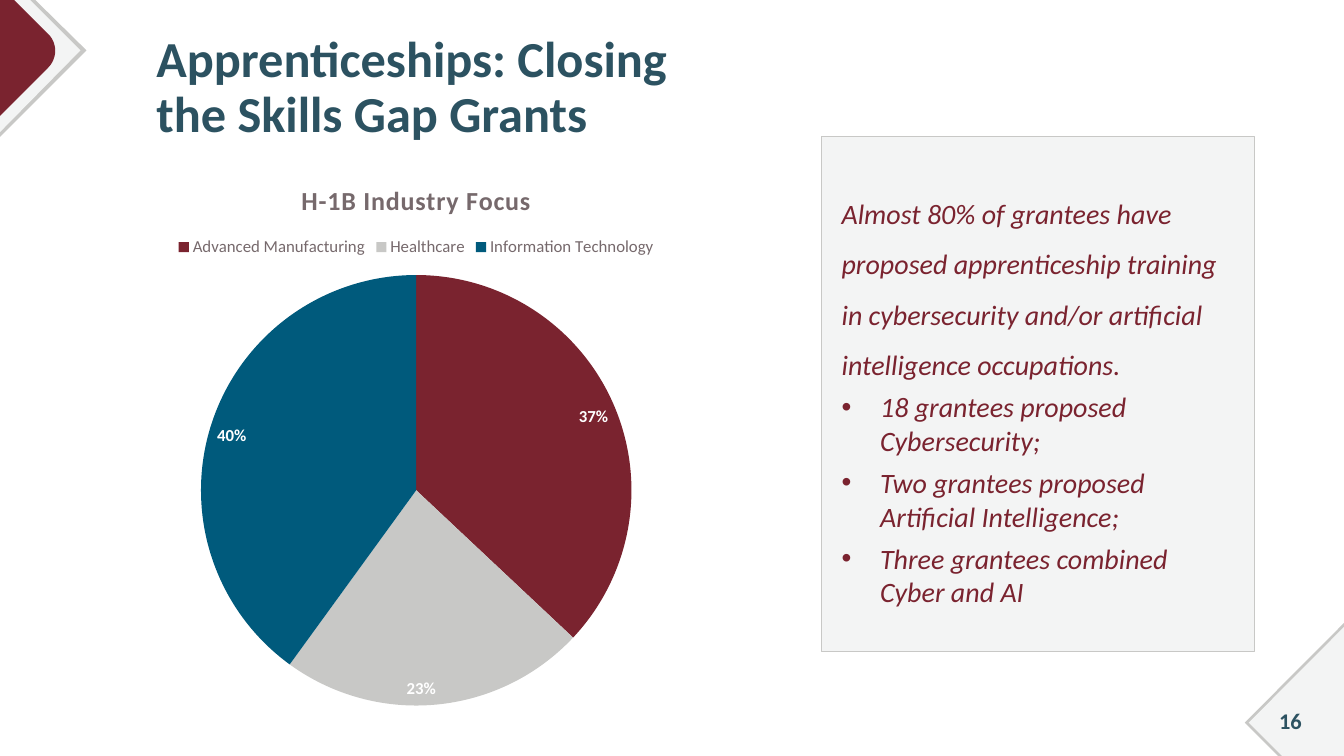
from dataclasses import dataclass

from lxml import etree
from pptx import Presentation
from pptx import util as u
from pptx.chart.data import CategoryChartData
from pptx.dml.color import RGBColor
from pptx.enum import chart as charts, shapes, text
from pptx.oxml.ns import qn


@dataclass(frozen=True)
class Theme:
    font: str = "Calibri"
    navy: str = "2C5261"
    maroon: str = "7A232F"
    blue: str = "005A7C"
    silver: str = "C8C8C6"
    mist: str = "F3F4F4"
    taupe: str = "76696C"
    ink: str = "242021"
    white: str = "FFFFFF"
    title_size: float = 36
    body_size: float = 20
    chart_title_size: float = 18.6
    number_size: float = 16
    label_size: float = 12
    chart_size: float = 10


THEME = Theme()
WIDTH, HEIGHT = 33.87, 19.05

# Corner outlines in centimetres, from back to front
CORNERS = [
    (THEME.silver, [(WIDTH, 15.7), (WIDTH, HEIGHT), (32.21, HEIGHT), (31.37, 18.21)]),
    (THEME.mist, [(WIDTH, 15.8), (WIDTH, HEIGHT), (32.31, HEIGHT), (31.47, 18.21)]),
    (THEME.silver, [(0, 0), (0.89, 0), (2.18, 1.27), (0, 3.45)]),
    (THEME.mist, [(0, 0), (0.76, 0), (2.03, 1.27), (0, 3.33)]),
]
TIP_CURVE = [(1.22, 0.86), (1.45, 1.09), (1.45, 1.47), (1.22, 1.7)]

STATEMENT = ("Almost 80% of grantees have proposed apprenticeship training in "
             "cybersecurity and/or artificial intelligence occupations.")
BULLETS = [
    "18 grantees proposed Cybersecurity;",
    "Two grantees proposed Artificial Intelligence;",
    "Three grantees combined Cyber and AI",
]
INDUSTRIES = [
    ("Advanced Manufacturing", 37, THEME.maroon),
    ("Healthcare", 23, THEME.silver),
    ("Information Technology", 40, THEME.blue),
]


def apply(target, **values):
    for name, value in values.items():
        setattr(target, name, value)


def style_font(font, size, color, **values):
    apply(font, name=THEME.font, size=u.Pt(size), **values)
    font.color.rgb = RGBColor.from_string(color)


def place(shape, left, top, width, height):
    apply(shape, left=u.Cm(left), top=u.Cm(top), width=u.Cm(width), height=u.Cm(height))


def set_frame(frame, anchor, left, top, right, bottom):
    apply(frame, word_wrap=True, auto_size=text.MSO_AUTO_SIZE.NONE, vertical_anchor=anchor,
          margin_left=u.Cm(left), margin_top=u.Cm(top),
          margin_right=u.Cm(right), margin_bottom=u.Cm(bottom))


def write(para, words, size, color, **values):
    span = para.add_run()
    span.text = words
    style_font(span.font, size, color, **values)


def fill_solid(shape, color):
    shape.shadow.inherit = False
    shape.fill.solid()
    shape.fill.fore_color.rgb = RGBColor.from_string(color)


def curve_points(controls, steps=12):
    """Sample a cubic curve given by four control points."""
    points = []
    for step in range(steps + 1):
        t = step / steps
        weights = [(1 - t) ** 3, 3 * t * (1 - t) ** 2, 3 * t * t * (1 - t), t ** 3]
        points.append(tuple(sum(w * point[axis] for w, point in zip(weights, controls))
                            for axis in (0, 1)))
    return points


def add_outline(page, color, points):
    start, *rest = [(u.Cm(x), u.Cm(y)) for x, y in points]
    builder = page.shapes.build_freeform(*start)
    builder.add_line_segments(rest, close=True)
    shape = builder.convert_to_shape()
    fill_solid(shape, color)
    shape.line.fill.background()


def add_bullet(para):
    props = para._p.get_or_add_pPr()
    props.set("marL", str(u.Cm(0.97)))
    props.set("indent", str(-u.Cm(0.97)))
    color = etree.SubElement(props, qn("a:buClr"))
    etree.SubElement(color, qn("a:srgbClr"), val=THEME.maroon)
    etree.SubElement(props, qn("a:buFont"), typeface="Arial")
    etree.SubElement(props, qn("a:buChar"), char="•")


def set_title(page):
    title = page.shapes.title
    place(title, 3.43, 0.46, 15.27, 3.28)
    set_frame(title.text_frame, text.MSO_ANCHOR.BOTTOM, 0.51, 0.13, 0.25, 0.13)
    para = title.text_frame.paragraphs[0]
    apply(para, alignment=text.PP_ALIGN.LEFT, line_spacing=0.9)
    write(para, "Apprenticeships: Closing the Skills Gap Grants",
          THEME.title_size, THEME.navy, bold=True)


def add_page_number(page):
    box = page.shapes.add_textbox(u.Cm(31.62), u.Cm(17.65), u.Cm(1.8), u.Cm(1.02))
    set_frame(box.text_frame, text.MSO_ANCHOR.MIDDLE, 0.25, 0.13, 0.25, 0.13)
    para = box.text_frame.paragraphs[0]
    para.alignment = text.PP_ALIGN.CENTER
    write(para, "16", THEME.number_size, THEME.navy, bold=True)


def add_panel(page):
    panel = page.shapes.add_shape(shapes.MSO_SHAPE.RECTANGLE,
                                  u.Cm(20.7), u.Cm(3.43), u.Cm(10.92), u.Cm(13.0))
    fill_solid(panel, THEME.mist)
    panel.line.color.rgb = RGBColor.from_string(THEME.silver)
    panel.line.width = u.Pt(0.75)
    frame = panel.text_frame
    set_frame(frame, text.MSO_ANCHOR.MIDDLE, 0.51, 0.51, 0.51, 0.51)
    para = frame.paragraphs[0]
    apply(para, alignment=text.PP_ALIGN.LEFT, line_spacing=1.5)
    write(para, STATEMENT, THEME.body_size, THEME.maroon, italic=True)
    for words in BULLETS:
        para = frame.add_paragraph()
        add_bullet(para)
        apply(para, alignment=text.PP_ALIGN.LEFT, space_before=u.Pt(6))
        write(para, words, THEME.body_size, THEME.maroon, italic=True)


def add_industry_pie(page):
    heading = "H-1B Industry Focus"
    names, values, colors = zip(*INDUSTRIES)
    data = CategoryChartData()
    data.categories = names
    data.add_series(heading, values)
    chart = page.shapes.add_chart(charts.XL_CHART_TYPE.PIE, u.Cm(0.28), u.Cm(4.06),
                                  u.Cm(20.42), u.Cm(14.07), data).chart
    style_font(chart.font, THEME.chart_size, THEME.ink)

    chart.has_title = True
    para = chart.chart_title.text_frame.paragraphs[0]
    write(para, heading, THEME.chart_title_size, THEME.taupe, bold=True)
    para.runs[0].font._element.set("spc", "50")

    chart.has_legend = True
    apply(chart.legend, position=charts.XL_LEGEND_POSITION.TOP, include_in_layout=False)
    style_font(chart.legend.font, THEME.label_size, THEME.taupe)

    plot = chart.plots[0]
    plot.vary_by_categories = True
    series = plot.series[0]
    for index, color in enumerate(colors):
        fill = series.points[index].format.fill
        fill.solid()
        fill.fore_color.rgb = RGBColor.from_string(color)
    labels = series.data_labels
    apply(labels, show_percentage=True, show_value=False, number_format="0%",
          number_format_is_linked=False, position=charts.XL_LABEL_POSITION.INSIDE_END)
    style_font(labels.font, THEME.label_size, THEME.white, bold=True)


def main():
    deck = Presentation()
    apply(deck, slide_width=u.Cm(WIDTH), slide_height=u.Cm(HEIGHT))
    page = deck.slides.add_slide(deck.slide_layouts.get_by_name("Title Only"))
    for color, points in CORNERS:
        add_outline(page, color, points)
    add_outline(page, THEME.maroon,
                [(0, 0), (0.36, 0), *curve_points(TIP_CURVE), (0, 2.92)])
    add_page_number(page)
    set_title(page)
    add_panel(page)
    add_industry_pie(page)
    deck.save("out.pptx")


if __name__ == "__main__":
    main()
